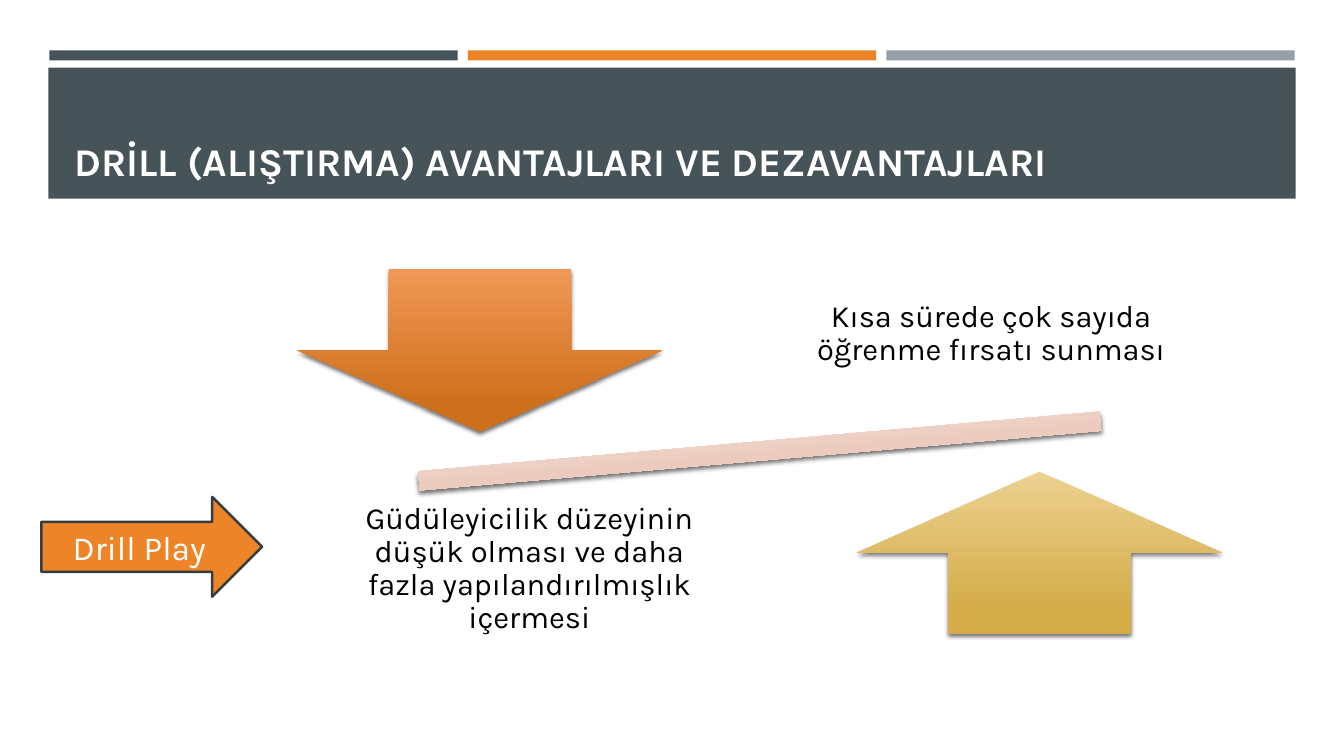
from dataclasses import dataclass

from lxml import etree
from pptx import Presentation
from pptx.dml.color import RGBColor
from pptx.enum.shapes import MSO_SHAPE
from pptx.enum.text import MSO_ANCHOR, MSO_AUTO_SIZE, PP_ALIGN
from pptx.oxml.ns import qn
from pptx.util import Inches, Pt

RECTANGLE = MSO_SHAPE.RECTANGLE
DOWN_ARROW = MSO_SHAPE.DOWN_ARROW
UP_ARROW = MSO_SHAPE.UP_ARROW
RIGHT_ARROW = MSO_SHAPE.RIGHT_ARROW
MINUS = MSO_SHAPE.MATH_MINUS
MIDDLE, BOTTOM = MSO_ANCHOR.MIDDLE, MSO_ANCHOR.BOTTOM
LEFT, CENTER = PP_ALIGN.LEFT, PP_ALIGN.CENTER
NO_AUTOFIT = MSO_AUTO_SIZE.NONE

FONT = "Karla"
SLATE, ORANGE, GREY = "465359", "ED8428", "969FA7"
OUTLINE, WHITE, BLACK = "343D42", "FFFFFF", "000000"
TITLE_LAYOUT = 5


@dataclass
class Area:
    left: float
    top: float
    width: float
    height: float

    def lengths(self):
        return [Inches(value) for value in (self.left, self.top, self.width, self.height)]


@dataclass
class BalancePart:
    kind: MSO_SHAPE
    area: Area
    light: str
    dark: str
    rotation: float = 0


@dataclass
class Caption:
    text: str
    area: Area


BALANCE_PARTS = [
    BalancePart(MINUS, Area(2.92, 4.07, 9.23, 0.81), "FEF8F6", "E1AF9C", 355),
    BalancePart(DOWN_ARROW, Area(2.95, 2.67, 3.62, 1.61), "F09856", "CE6F1B"),
    BalancePart(UP_ARROW, Area(8.5, 4.68, 3.62, 1.61), "ECD190", "D4AD49"),
]

CAPTIONS = [
    Caption("Kısa sürede çok sayıda öğrenme fırsatı sunması",
            Area(7.9, 2.47, 3.86, 1.69)),
    Caption("Güdüleyicilik düzeyinin düşük olması ve daha fazla yapılandırılmışlık içermesi",
            Area(3.32, 4.8, 3.86, 1.69)),
]


def color(value: str) -> RGBColor:
    return RGBColor.from_string(value)


def add_solid(page, kind: MSO_SHAPE, area: Area, fill: str):
    shape = page.shapes.add_shape(kind, *area.lengths())
    shape.shadow.inherit = False
    shape.fill.solid()
    shape.fill.fore_color.rgb = color(fill)
    shape.line.fill.background()
    return shape


def write(shape, text: str, size: float, ink: str, align: PP_ALIGN,
          anchor: MSO_ANCHOR, bold: bool = False) -> None:
    frame = shape.text_frame
    frame.text = text
    frame.word_wrap = True
    frame.auto_size = NO_AUTOFIT
    frame.vertical_anchor = anchor
    para = frame.paragraphs[0]
    para.alignment = align
    font = para.runs[0].font
    font.name, font.size, font.bold = FONT, Pt(size), bold
    font.color.rgb = color(ink)


def add_drop_shadow(shape) -> None:
    effects = shape.element.spPr.find(qn("a:effectLst"))
    shadow = etree.SubElement(effects, qn("a:outerShdw"), blurRad=str(Pt(3)),
                              dist=str(Pt(2)), dir="5400000", rotWithShape="0")
    tint = etree.SubElement(shadow, qn("a:srgbClr"), val=BLACK)
    etree.SubElement(tint, qn("a:alpha"), val="55000")


def add_balance_part(page, part: BalancePart) -> None:
    shape = add_solid(page, part.kind, part.area, part.light)
    shape.rotation = part.rotation
    shape.fill.gradient()
    shape.fill.gradient_angle = 270
    stops = zip(shape.fill.gradient_stops, (0, 0.84), (part.light, part.dark))
    for stop, position, shade in stops:
        stop.position = position
        stop.color.rgb = color(shade)
    add_drop_shadow(shape)


def add_caption(page, caption: Caption) -> None:
    box = page.shapes.add_textbox(*caption.area.lengths())
    write(box, caption.text, 22, BLACK, CENTER, MIDDLE)
    frame = box.text_frame
    frame.margin_left = frame.margin_right = Inches(0.17)
    frame.margin_top = frame.margin_bottom = Inches(0.17)
    frame.paragraphs[0].line_spacing = 0.9


def add_header(page) -> None:
    for index, fill in enumerate((SLATE, ORANGE, GREY)):
        add_solid(page, RECTANGLE, Area(0.49 + index * 4.15, 0.5, 4.05, 0.1), fill)
    add_solid(page, RECTANGLE, Area(0.48, 0.67, 12.37, 1.3), SLATE)

    title = page.shapes.title
    title.left, title.top, title.width, title.height = Area(0.64, 0.77, 12.06, 1.11).lengths()
    write(title, "DRİLL (ALIŞTIRMA) AVANTAJLARI VE DEZAVANTAJLARI",
          28, WHITE, LEFT, BOTTOM, bold=True)
    # Bring the title in front of its band
    page.shapes.element.append(title.element)


def main() -> None:
    deck = Presentation()
    deck.slide_width, deck.slide_height = Inches(13.33), Inches(7.5)
    page = deck.slides.add_slide(deck.slide_layouts[TITLE_LAYOUT])

    # Header bars and title
    add_header(page)

    # Tilted balance with its two arrows
    for part in BALANCE_PARTS:
        add_balance_part(page, part)

    # Advantage and disadvantage
    for caption in CAPTIONS:
        add_caption(page, caption)

    # Label arrow
    label = add_solid(page, RIGHT_ARROW, Area(0.41, 4.93, 2.19, 0.99), ORANGE)
    label.line.color.rgb = color(OUTLINE)
    label.line.width = Pt(1.75)
    write(label, "Drill Play", 24, WHITE, CENTER, MIDDLE)

    deck.save("out.pptx")


if __name__ == "__main__":
    main()
